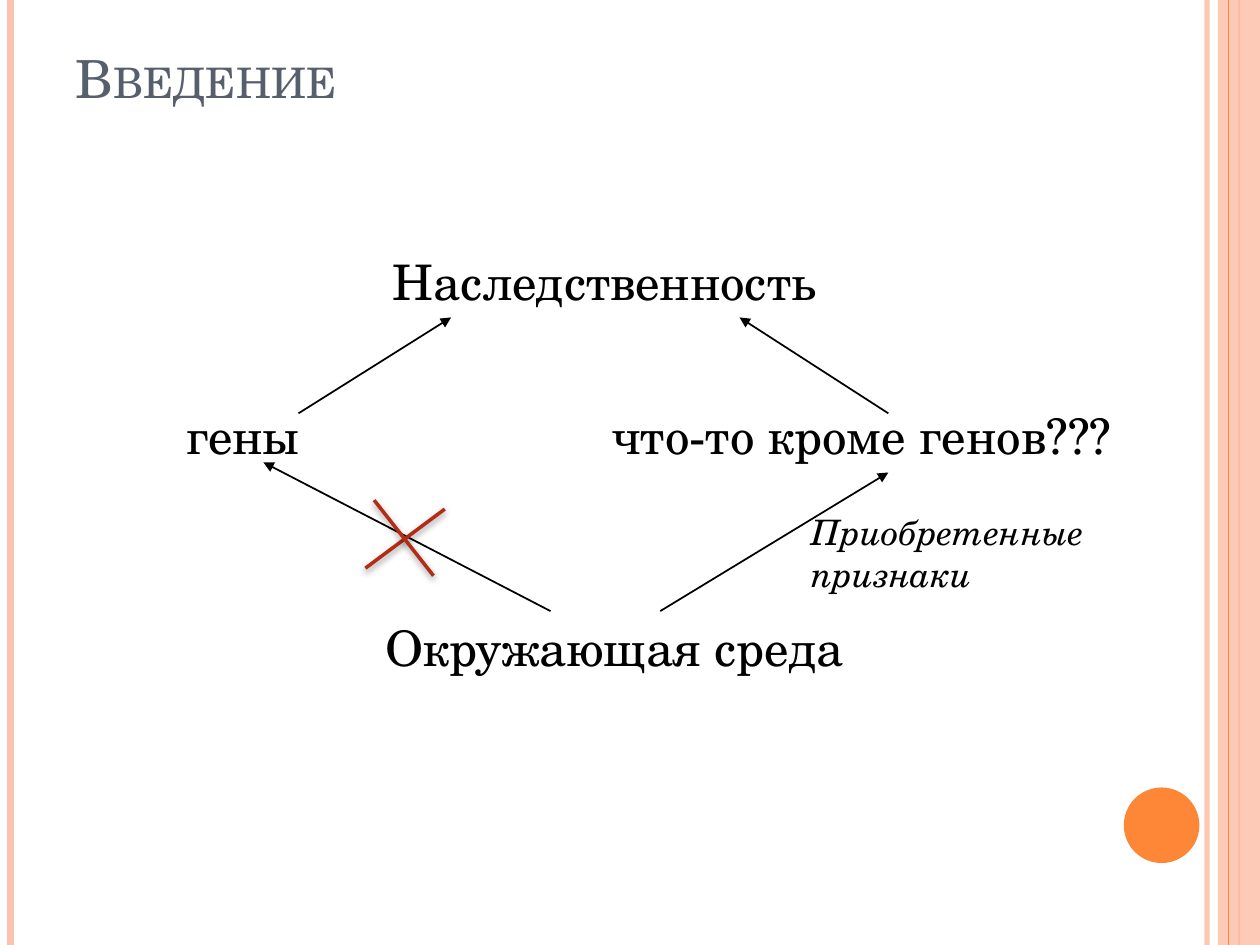
from lxml import etree
from pptx import Presentation
from pptx.dml.color import RGBColor
from pptx.enum import shapes, text
from pptx.oxml import ns
from pptx.util import Pt

FONT = "TeX Gyre Schola"
PEACH, ORANGE, RED, BLACK = "FEC3AE", "FE8637", "B32C16", "000000"


def rgb(code):
    return RGBColor.from_string(code)


def add(node, tag, **attrs):
    """Append an XML child with the given attributes."""
    return etree.SubElement(node, ns.qn(tag), attrs)


deck = Presentation()
deck.slide_width, deck.slide_height = Pt(720), Pt(540)
slide = deck.slides.add_slide(deck.slide_layouts[6])


def write(words, x, y, w, h, size=28, color=BLACK, italic=False,
          caps=False, wrap=False, anchor=text.MSO_ANCHOR.TOP):
    box = slide.shapes.add_textbox(Pt(x), Pt(y), Pt(w), Pt(h))
    frame = box.text_frame
    frame.word_wrap = wrap
    frame.vertical_anchor = anchor
    frame.text = words
    for para in frame.paragraphs:
        for run in para.runs:
            font = run.font
            font.name, font.size, font.italic = FONT, Pt(size), italic
            font.color.rgb = rgb(color)
    if caps:
        for props in box.element.iter(ns.qn("a:rPr")):
            props.set("cap", "small")


def draw(x1, y1, x2, y2, color=BLACK, width=1, arrow=False, shadow=False, alpha=100):
    line = slide.shapes.add_connector(
        shapes.MSO_CONNECTOR.STRAIGHT, Pt(x1), Pt(y1), Pt(x2), Pt(y2))
    line.line.color.rgb = rgb(color)
    line.line.width = Pt(width)
    props = line.element.spPr
    if alpha < 100:
        add(props.find(".//" + ns.qn("a:srgbClr")), "a:alpha", val=str(alpha * 1000))
    if arrow:
        add(props.find(ns.qn("a:ln")), "a:tailEnd", type="triangle")
    effects = add(props, "a:effectLst")
    if shadow:
        outer = add(effects, "a:outerShdw", blurRad=str(Pt(4)), dist=str(Pt(2)),
                    dir="5400000", rotWithShape="0")
        add(add(outer, "a:srgbClr", val=BLACK), "a:alpha", val="40000")


# Side stripes, band and disc
for x, color, width, alpha in [(689.8, PEACH, 3, 93), (6, PEACH, 4.5, 100),
                               (708, ORANGE, 1.5, 100)]:
    draw(x, 0, x, 540, color, width, alpha=alpha)

kinds = shapes.MSO_SHAPE
band = slide.shapes.add_shape(kinds.RECTANGLE, Pt(696), Pt(0), Pt(24), Pt(540))
draw(702, 0, 702, 540, ORANGE, 0.75)
disc = slide.shapes.add_shape(kinds.OVAL, Pt(642.2), Pt(450), Pt(43.2), Pt(43.2))
for shape, color in [(band, PEACH), (disc, ORANGE)]:
    shape.shadow.inherit = False
    shape.fill.solid()
    shape.fill.fore_color.rgb = rgb(color)
    shape.line.fill.background()
tint = band.element.spPr.find(ns.qn("a:solidFill") + "/" + ns.qn("a:srgbClr"))
add(tint, "a:alpha", val="87000")

write("Введение", 36, 21.6, 588, 44, size=30, color="575F6D", caps=True,
      wrap=True, anchor=text.MSO_ANCHOR.BOTTOM)

# Ideas and the arrows between them
for words, x, y, w in [("Наследственность", 217.4, 140.4, 260.6),
                       ("гены", 99.4, 228.2, 80.6),
                       ("что-то кроме генов???", 342.7, 228.2, 303.8),
                       ("Окружающая среда", 213.1, 349.2, 283)]:
    write(words, x, y, w, 41)
write("Приобретенные\nпризнаки", 456.5, 288, 177.8, 55.4, size=20, italic=True)

for ends in [(170.6, 236.2, 257.8, 181.4), (507.6, 236.2, 422.6, 181.4),
             (314.6, 349.2, 150.5, 264.2), (377.3, 349.2, 507.6, 270)]:
    draw(*ends, arrow=True)

# Cross over the barred route
for ends in [(208.8, 324.7, 254.2, 290.9), (213.8, 285.8, 247.7, 329)]:
    draw(*ends, color=RED, width=2, shadow=True)

deck.save("out.pptx")
